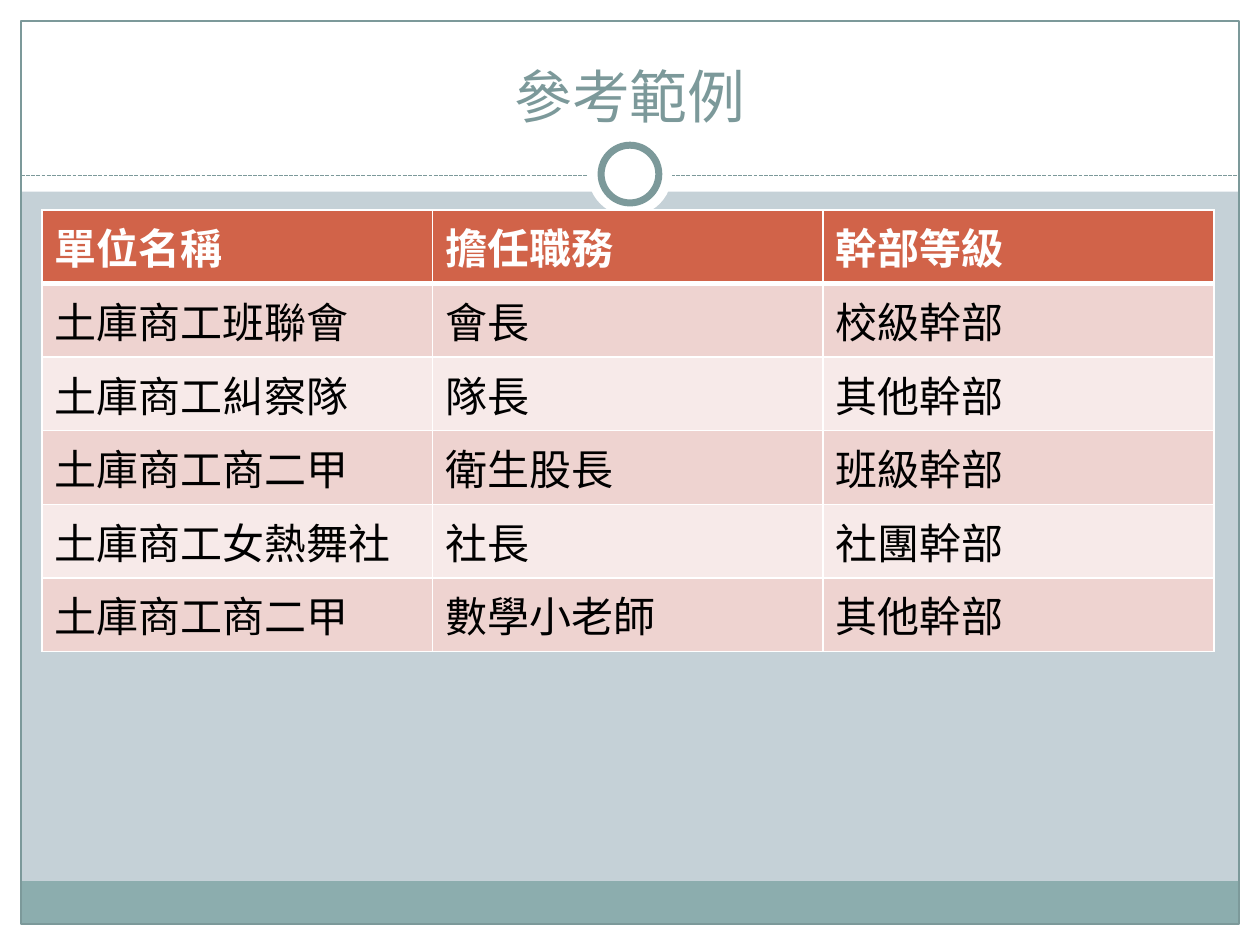
from lxml import etree
from pptx import Presentation
from pptx.dml.color import RGBColor
from pptx.enum.dml import MSO_LINE
from pptx.enum.shapes import MSO_CONNECTOR, MSO_SHAPE
from pptx.enum.text import MSO_ANCHOR, MSO_AUTO_SIZE, PP_ALIGN
from pptx.oxml.ns import qn
from pptx.util import Pt

RECTANGLE, OVAL = MSO_SHAPE.RECTANGLE, MSO_SHAPE.OVAL
STRAIGHT = MSO_CONNECTOR.STRAIGHT
DASHED = MSO_LINE.SQUARE_DOT
BOTTOM, CENTER = MSO_ANCHOR.BOTTOM, PP_ALIGN.CENTER
NO_AUTOFIT = MSO_AUTO_SIZE.NONE

WHITE = RGBColor(0xFF, 0xFF, 0xFF)
BLACK = RGBColor(0x00, 0x00, 0x00)
BACKGROUND = RGBColor(0xC5, 0xD1, 0xD7)
TEAL = RGBColor(0x7C, 0x99, 0x9A)
FOOTER_TEAL = RGBColor(0x8C, 0xAD, 0xAE)
HEADER_RED = RGBColor(0xD1, 0x63, 0x49)
ROW_FILLS = (RGBColor(0xEE, 0xD3, 0xD0), RGBColor(0xF7, 0xEA, 0xE9))

WIDTH, HEIGHT = 720, 540
MARGIN = 12
INNER_WIDTH = WIDTH - 2 * MARGIN
INNER_HEIGHT = HEIGHT - 2 * MARGIN
BAND_HEIGHT = 109.5
RING_Y = 99.5

ROWS = [
    ("單位名稱", "擔任職務", "幹部等級"),
    ("土庫商工班聯會", "會長", "校級幹部"),
    ("土庫商工糾察隊", "隊長", "其他幹部"),
    ("土庫商工商二甲", "衛生股長", "班級幹部"),
    ("土庫商工女熱舞社", "社長", "社團幹部"),
    ("土庫商工商二甲", "數學小老師", "其他幹部"),
]


class SlideBuilder:
    """Holds the current slide and the style its elements share."""

    font = "Cambria"
    title_size = 33
    table_size = 24
    thin_line = 0.75

    def __init__(self, slide):
        self.slide = slide

    def background(self, color):
        fill = self.slide.background.fill
        fill.solid()
        fill.fore_color.rgb = color

    def shape(self, kind, left, top, width, height, fill=None, line=None, weight=thin_line):
        shape = self.slide.shapes.add_shape(kind, Pt(left), Pt(top), Pt(width), Pt(height))
        shape.shadow.inherit = False
        if fill is None:
            shape.fill.background()
        else:
            shape.fill.solid()
            shape.fill.fore_color.rgb = fill
        if line is None:
            shape.line.fill.background()
        else:
            shape.line.color.rgb = line
            shape.line.width = Pt(weight)

    def circle(self, center_x, center_y, diameter, **style):
        radius = diameter / 2
        self.shape(OVAL, center_x - radius, center_y - radius, diameter, diameter, **style)

    def dashed_rule(self, left, right, y, color):
        rule = self.slide.shapes.add_connector(STRAIGHT, Pt(left), Pt(y), Pt(right), Pt(y))
        rule.line.color.rgb = color
        rule.line.width = Pt(self.thin_line)
        rule.line.dash_style = DASHED
        etree.SubElement(rule._element.spPr, qn("a:effectLst"))

    def format_text(self, para, size, color, bold=False):
        for span in para.runs:
            span.font.name = self.font
            span.font.size = Pt(size)
            span.font.color.rgb = color
            span.font.bold = bold

    def title(self, text, left, top, width, height):
        """Fill the title placeholder and bring it in front of the shapes so far."""
        title = self.slide.shapes.title
        title.left, title.top = Pt(left), Pt(top)
        title.width, title.height = Pt(width), Pt(height)
        frame = title.text_frame
        frame.text = text
        frame.auto_size = NO_AUTOFIT
        frame.vertical_anchor = BOTTOM
        para = frame.paragraphs[0]
        para.alignment = CENTER
        self.format_text(para, self.title_size, TEAL)
        title._element.getparent().append(title._element)

    def cell_borders(self, cell, top, bottom):
        properties = cell._tc.get_or_add_tcPr()
        for side, weight in (("L", 1), ("R", 1), ("T", top), ("B", bottom)):
            line = etree.SubElement(properties, qn(f"a:ln{side}"), w=str(Pt(weight)))
            fill = etree.SubElement(line, qn("a:solidFill"))
            etree.SubElement(fill, qn("a:srgbClr"), val=str(WHITE))

    def table(self, rows, left, top, width, row_height):
        frame = self.slide.shapes.add_table(
            len(rows), len(rows[0]), Pt(left), Pt(top), Pt(width), Pt(row_height * len(rows)))
        for row_index, texts in enumerate(rows):
            header = row_index == 0
            fill = HEADER_RED if header else ROW_FILLS[(row_index - 1) % 2]
            for column_index, text in enumerate(texts):
                cell = frame.table.cell(row_index, column_index)
                self.cell_borders(cell, top=3 if row_index == 1 else 1, bottom=3 if header else 1)
                cell.fill.solid()
                cell.fill.fore_color.rgb = fill
                cell.text_frame.text = text
                self.format_text(cell.text_frame.paragraphs[0], self.table_size,
                                 WHITE if header else BLACK, bold=header)


def main():
    deck = Presentation()
    deck.slide_width, deck.slide_height = Pt(WIDTH), Pt(HEIGHT)
    page = SlideBuilder(deck.slides.add_slide(deck.slide_layouts[5]))
    page.background(BACKGROUND)

    for left, top, width, height in (
        (0, HEIGHT - MARGIN, WIDTH, MARGIN),
        (0, 0, WIDTH, BAND_HEIGHT),
        (0, 0, MARGIN, HEIGHT),
        (WIDTH - MARGIN, 0, MARGIN, HEIGHT),
    ):
        page.shape(RECTANGLE, left, top, width, height, fill=WHITE)
    page.shape(RECTANGLE, MARGIN, 503.5, INNER_WIDTH, 24.5, fill=FOOTER_TEAL)
    page.shape(RECTANGLE, MARGIN, MARGIN, INNER_WIDTH, INNER_HEIGHT, line=TEAL)
    page.dashed_rule(MARGIN, WIDTH - MARGIN, 100.5, TEAL)
    page.circle(WIDTH / 2, RING_Y, 48, fill=WHITE)
    page.circle(WIDTH / 2, RING_Y, 33, fill=WHITE, line=TEAL, weight=4)

    page.title("參考範例", 24, 18, 672, 60)
    page.table(ROWS, 24, 120, 669.6, 42)
    deck.save("out.pptx")


if __name__ == "__main__":
    main()
